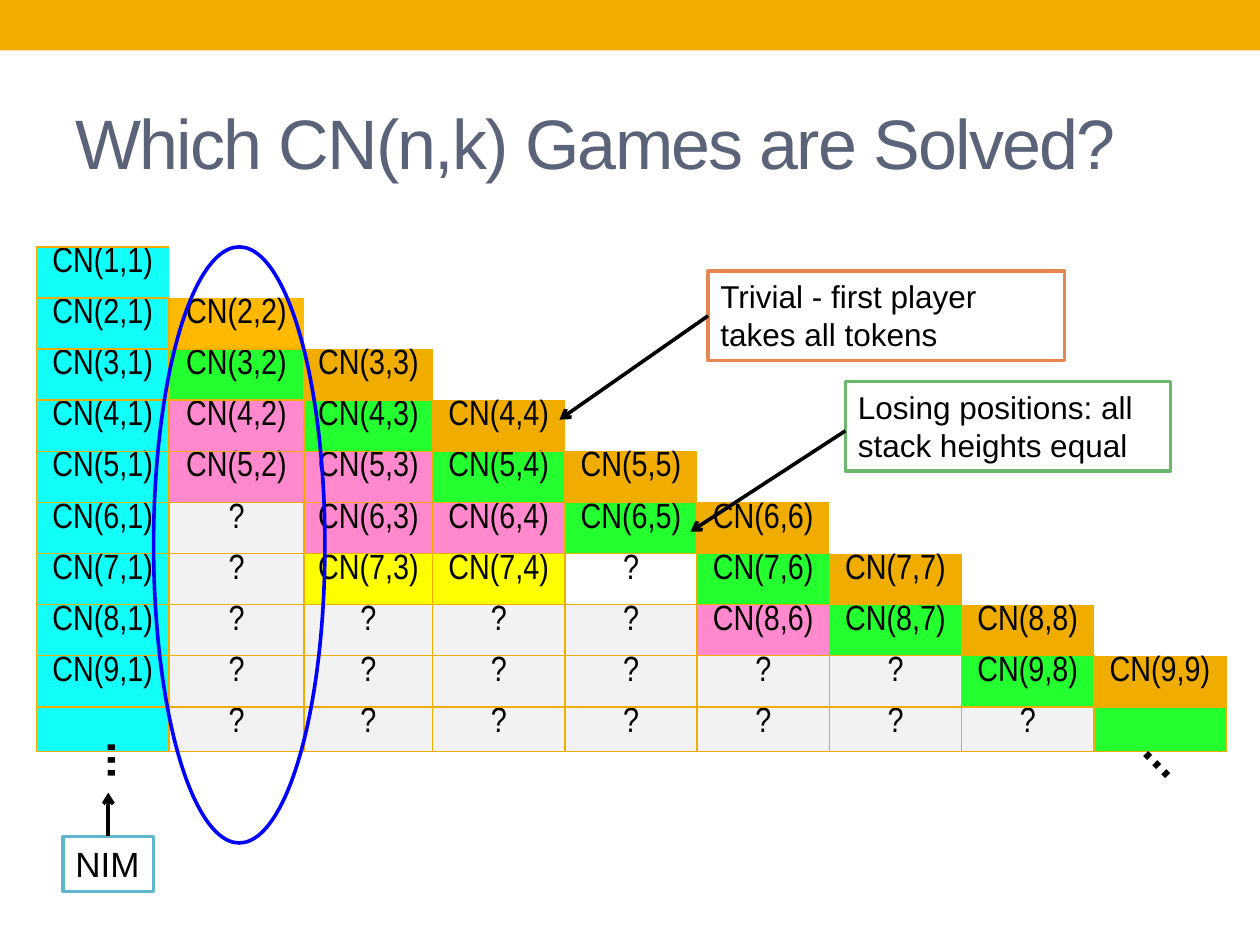
import pptx
import pptx.util
import pptx.dml.color
import pptx.enum.shapes
import pptx.enum.text
import pptx.oxml.ns
import lxml.etree

Pt = pptx.util.Pt
SHAPES = pptx.enum.shapes.MSO_SHAPE
COLORS = {
    "amber": "F0AD00", "gold": "FFB900", "cyan": "12FFF9", "green": "24FF30",
    "pink": "FF89CC", "yellow": "FFFF00", "grey": "F2F2F2", "slate": "5A6378",
    "black": "000000", "blue": "0000FF", "teal": "60B5CC", "orange": "E88651",
    "leaf": "6BB76D",
}
PINK_GAMES = {(4, 2), (5, 2), (5, 3), (6, 3), (6, 4), (8, 6)}
YELLOW_GAMES = {(7, 3), (7, 4)}
COLUMN_WIDTHS = [75.6, 77.4, 73.4] + [75.6] * 6
ROW_HEIGHTS = [29.2] * 9 + [25.7]


def rgb(color):
    return pptx.dml.color.RGBColor.from_string(COLORS[color])


def sub(parent, tag, **attributes):
    return lxml.etree.SubElement(parent, pptx.oxml.ns.qn(tag), attributes)


def add_run(paragraph, text, size, font, color="black", bold=False):
    run = paragraph.add_run()
    run.text = text
    run.font.size = Pt(size)
    run.font.name = font
    run.font.bold = bold
    run.font.color.rgb = rgb(color)
    return run


def add_text(slide, box, text, size, font, color="black", bold=False, wrap=True, rotation=0):
    label = slide.shapes.add_textbox(*map(Pt, box))
    label.rotation = rotation
    label.text_frame.word_wrap = wrap
    run = add_run(label.text_frame.paragraphs[0], text, size, font, color, bold)
    return label, run


def add_outline(slide, kind, box, color):
    outline = slide.shapes.add_shape(kind, *map(Pt, box))
    outline.shadow.inherit = False
    outline.fill.background()
    outline.line.color.rgb = rgb(color)
    outline.line.width = Pt(2.08)
    return outline


def add_note(slide, box, text, size, color, wrap=True):
    note = add_outline(slide, SHAPES.RECTANGLE, box, color)
    frame = note.text_frame
    frame.word_wrap = wrap
    frame.vertical_anchor = pptx.enum.text.MSO_ANCHOR.TOP
    frame.paragraphs[0].alignment = pptx.enum.text.PP_ALIGN.LEFT
    add_run(frame.paragraphs[0], text, size, "Arial")
    return note


def add_arrow(slide, start, end):
    arrow = slide.shapes.add_connector(
        pptx.enum.shapes.MSO_CONNECTOR.STRAIGHT, *map(Pt, start + end))
    arrow.line.color.rgb = rgb("black")
    arrow.line.width = Pt(2.08)
    sub(arrow.line._get_or_add_ln(), "a:tailEnd", type="arrow")
    sub(arrow._element.spPr, "a:effectLst")
    return arrow


def set_borders(cell, sides):
    properties = cell._tc.get_or_add_tcPr()
    for position, side in enumerate("LRTB"):
        edge = lxml.etree.Element(pptx.oxml.ns.qn("a:ln" + side), w=str(Pt(1)))
        if side in sides:
            sub(sub(edge, "a:solidFill"), "a:srgbClr", val=COLORS["amber"])
        else:
            sub(edge, "a:noFill")
        properties.insert(position, edge)


def describe_game(n, k):
    name = f"CN({n},{k})" if n < 10 else ""
    if k > n:
        return "", None, ""
    if k == n:
        sides = "LB" + ("T" if n == 1 else "") + ("R" if n == 9 else "")
        return name, {1: "cyan", 2: "gold"}.get(n, "amber"), sides
    if k == 1:
        return name, "cyan", "LRTB"
    if k == n - 1:
        return name, "green", "LRTB"
    if (n, k) in PINK_GAMES:
        return name, "pink", "LRTB"
    if (n, k) in YELLOW_GAMES:
        return name, "yellow", "LRTB"
    return "?", None if (n, k) == (7, 5) else "grey", "LRTB"


def fill_cell(cell, n, k):
    text, color, sides = describe_game(n, k)
    cell.margin_left = cell.margin_right = cell.margin_top = cell.margin_bottom = 0
    if color:
        cell.fill.solid()
        cell.fill.fore_color.rgb = rgb(color)
    else:
        cell.fill.background()
    set_borders(cell, sides)
    if text:
        paragraph = cell.text_frame.paragraphs[0]
        paragraph.alignment = pptx.enum.text.PP_ALIGN.CENTER
        add_run(paragraph, text, 20, "Arial Narrow")


def add_games(slide):
    games = slide.shapes.add_table(
        len(ROW_HEIGHTS), len(COLUMN_WIDTHS), Pt(20.9), Pt(141.1),
        Pt(sum(COLUMN_WIDTHS)), Pt(sum(ROW_HEIGHTS))).table
    games.first_row = games.horz_banding = False
    for column, width in zip(games.columns, COLUMN_WIDTHS):
        column.width = Pt(width)
    for n, (row, height) in enumerate(zip(games.rows, ROW_HEIGHTS), 1):
        row.height = Pt(height)
        for k, cell in enumerate(row.cells, 1):
            fill_cell(cell, n, k)


def main():
    deck = pptx.Presentation()
    deck.slide_width, deck.slide_height = Pt(720), Pt(540)
    slide = deck.slides.add_slide(deck.slide_layouts[6])

    band = slide.shapes.add_shape(SHAPES.RECTANGLE, 0, 0, Pt(720), Pt(28.8))
    band.shadow.inherit = False
    band.fill.solid()
    band.fill.fore_color.rgb = rgb("amber")
    band.line.fill.background()

    title, title_run = add_text(slide, (36, 42, 648, 78), "Which CN(n,k) Games are Solved?",
                                40, "Arial", "slate")
    title.text_frame.vertical_anchor = pptx.enum.text.MSO_ANCHOR.MIDDLE
    title_run.font._element.set("spc", "-100")

    add_games(slide)
    add_text(slide, (36, 414, 37.4, 41), "…", 28, "Arial Narrow", bold=True,
             wrap=False, rotation=270)
    add_text(slide, (648, 413.3, 44.6, 41), "…", 28, "Arial Narrow", bold=True, rotation=45)

    nim = add_note(slide, (36, 478, 51.8, 31.5), "NIM", 20, "teal", wrap=False)
    add_arrow(slide, (61.9, 478), (61.9, 453)).begin_connect(nim, 0)
    trivial = add_note(slide, (404.6, 155, 203.8, 51), "Trivial - first player takes all tokens",
                       18, "orange")
    add_arrow(slide, (404.6, 180.5), (319.7, 239.8)).begin_connect(trivial, 1)
    add_note(slide, (483.1, 218, 185.8, 51), "Losing positions: all stack heights equal",
             18, "leaf")
    add_arrow(slide, (483.1, 246.2), (394.6, 303.8))
    add_outline(slide, SHAPES.OVAL, (87.8, 141.1, 97.9, 340.6), "blue")

    deck.save("out.pptx")


if __name__ == "__main__":
    main()
